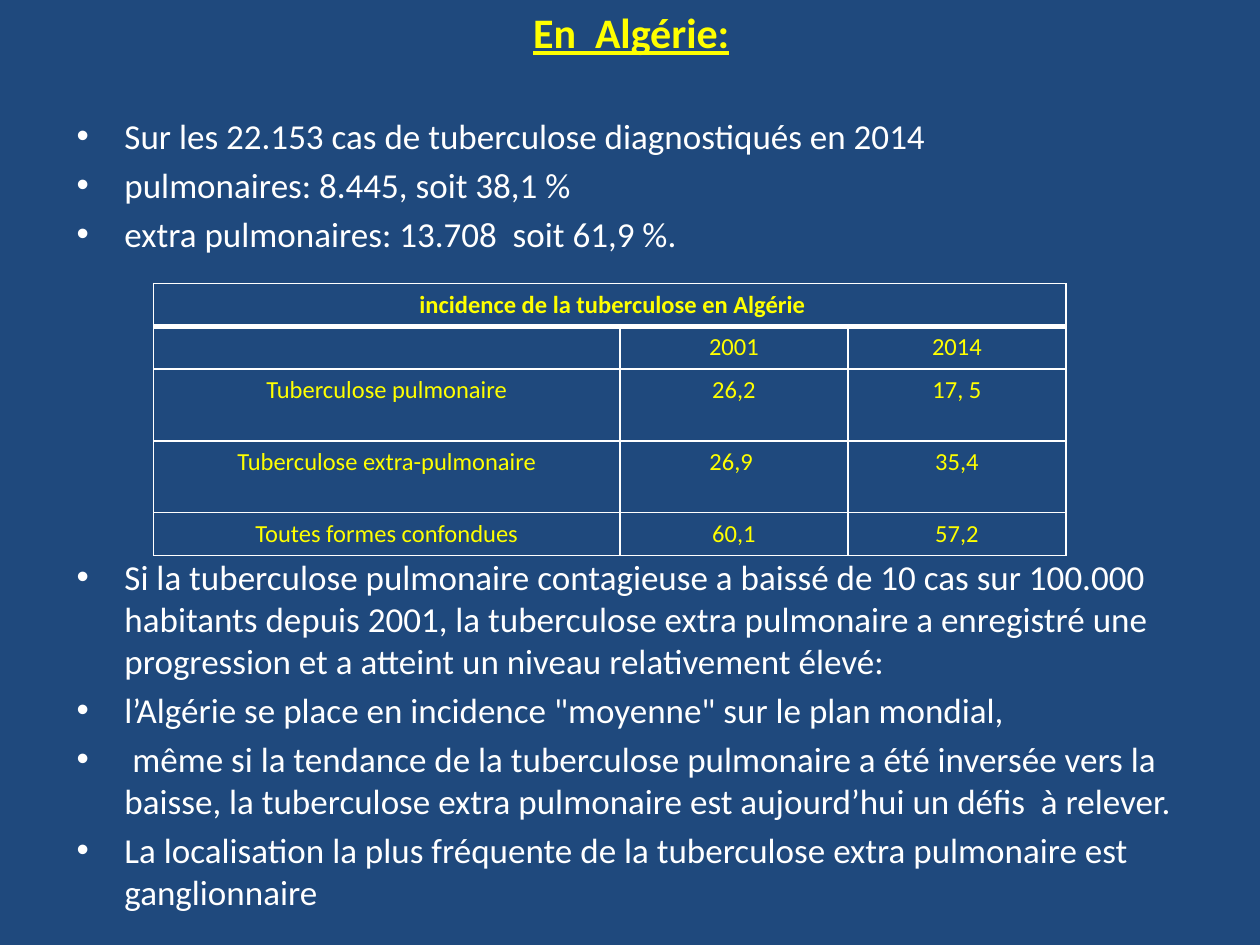
from lxml.etree import SubElement
from pptx import Presentation
from pptx.dml.color import RGBColor
from pptx.enum.text import MSO_ANCHOR, MSO_AUTO_SIZE, PP_ALIGN
from pptx.oxml.ns import qn
from pptx.util import Inches, Pt

COLORS = {"background": "1F497D", "accent": "FFFF00", "text": "FFFFFF", "border": "FFFFFF"}
FONT = "Calibri"

TITLE = "En  Algérie:"
CASES = [
    "Sur les 22.153 cas de tuberculose diagnostiqués en 2014",
    "pulmonaires: 8.445, soit 38,1 %",
    "extra pulmonaires: 13.708  soit 61,9 %.",
]
FINDINGS = [
    "Si la tuberculose pulmonaire contagieuse a baissé de 10 cas sur 100.000 habitants "
    "depuis 2001, la tuberculose extra pulmonaire a enregistré une progression et a atteint "
    "un niveau relativement élevé:",
    "l’Algérie se place en incidence \"moyenne\" sur le plan mondial,",
    " même si la tendance de la tuberculose pulmonaire a été inversée vers la baisse, "
    "la tuberculose extra pulmonaire est aujourd’hui un défis  à relever.",
    "La localisation la plus fréquente de la tuberculose extra pulmonaire est ganglionnaire",
]
INCIDENCE = [
    (" incidence de la tuberculose en Algérie", "", ""),
    ("", "2001", "2014"),
    ("Tuberculose pulmonaire", "26,2", "17, 5"),
    ("Tuberculose extra-pulmonaire", "26,9 ", "35,4"),
    ("Toutes formes confondues", "60,1", "57,2"),
]
COLUMN_WIDTHS = [3.7, 1.81, 1.73]
ROW_HEIGHTS = [0.34, 0.34, 0.57, 0.57, 0.34]
TABLE_LEFT, TABLE_TOP = 1.22, 2.25
BODY_LEFT, BODY_WIDTH = 0.51, 9
INDENT = 0.38


def style(paragraph, size, color, bold=False, align=PP_ALIGN.LEFT):
    paragraph.alignment = align
    font = paragraph.font
    font.name, font.size, font.bold = FONT, Pt(size), bold
    font.color.rgb = RGBColor.from_string(COLORS[color])


def prepare_frame(shape):
    frame = shape.text_frame
    frame.word_wrap = True
    frame.auto_size = MSO_AUTO_SIZE.NONE
    frame.vertical_anchor = MSO_ANCHOR.TOP
    frame.margin_top = frame.margin_bottom = 0
    return frame


def add_bullets(slide, items, top, height):
    box = slide.shapes.add_textbox(
        Inches(BODY_LEFT), Inches(top), Inches(BODY_WIDTH), Inches(height))
    frame = prepare_frame(box)
    for index, item in enumerate(items):
        paragraph = frame.add_paragraph() if index else frame.paragraphs[0]
        paragraph.text = item
        style(paragraph, 20, "text")
        paragraph.space_before = Pt(4 if index else 0)
        properties = paragraph._p.get_or_add_pPr()
        properties.set("marL", str(Inches(INDENT)))
        properties.set("indent", str(-Inches(INDENT)))
        bullet_font = properties.makeelement(qn("a:buFont"), {"typeface": "Arial"})
        bullet = properties.makeelement(qn("a:buChar"), {"char": "•"})
        properties.find(qn("a:defRPr")).addprevious(bullet_font)
        bullet_font.addnext(bullet)


def set_borders(cell, widths):
    """Draw the left, right, top and bottom borders, widths in points."""
    properties = cell._tc.get_or_add_tcPr()
    for position, (side, width) in enumerate(zip("LRTB", widths)):
        line = properties.makeelement(qn(f"a:ln{side}"), {"w": str(Pt(width))})
        fill = SubElement(line, qn("a:solidFill"))
        SubElement(fill, qn("a:srgbClr"), val=COLORS["border"])
        properties.insert(position, line)


def add_incidence_table(slide):
    table = slide.shapes.add_table(
        len(INCIDENCE), len(COLUMN_WIDTHS), Inches(TABLE_LEFT), Inches(TABLE_TOP),
        Inches(sum(COLUMN_WIDTHS)), Inches(sum(ROW_HEIGHTS))).table
    for column, width in zip(table.columns, COLUMN_WIDTHS):
        column.width = Inches(width)
    for row, height in zip(table.rows, ROW_HEIGHTS):
        row.height = Inches(height)
    table.cell(0, 0).merge(table.cell(0, len(COLUMN_WIDTHS) - 1))
    for row_index, values in enumerate(INCIDENCE):
        for column_index, value in enumerate(values):
            cell = table.cell(row_index, column_index)
            cell.text = value
            style(cell.text_frame.paragraphs[0], 14, "accent",
                  bold=row_index == 0, align=PP_ALIGN.CENTER)
            cell.fill.background()
            set_borders(cell, (1, 1, 3 if row_index == 1 else 1, 3 if row_index == 0 else 1))


def main():
    presentation = Presentation()
    presentation.slide_width, presentation.slide_height = Inches(10), Inches(7.5)
    slide = presentation.slides.add_slide(presentation.slide_layouts[5])
    slide.background.fill.solid()
    slide.background.fill.fore_color.rgb = RGBColor.from_string(COLORS["background"])

    title = slide.shapes.title
    title.left, title.top = Inches(BODY_LEFT), Inches(0.05)
    title.width, title.height = Inches(BODY_WIDTH), Inches(0.45)
    paragraph = prepare_frame(title).paragraphs[0]
    paragraph.text = TITLE
    style(paragraph, 24, "accent", bold=True, align=PP_ALIGN.CENTER)
    paragraph.font.underline = True

    add_bullets(slide, CASES, top=0.91, height=1.2)
    add_bullets(slide, FINDINGS, top=4.41, height=2.9)
    add_incidence_table(slide)
    presentation.save("out.pptx")


if __name__ == "__main__":
    main()
